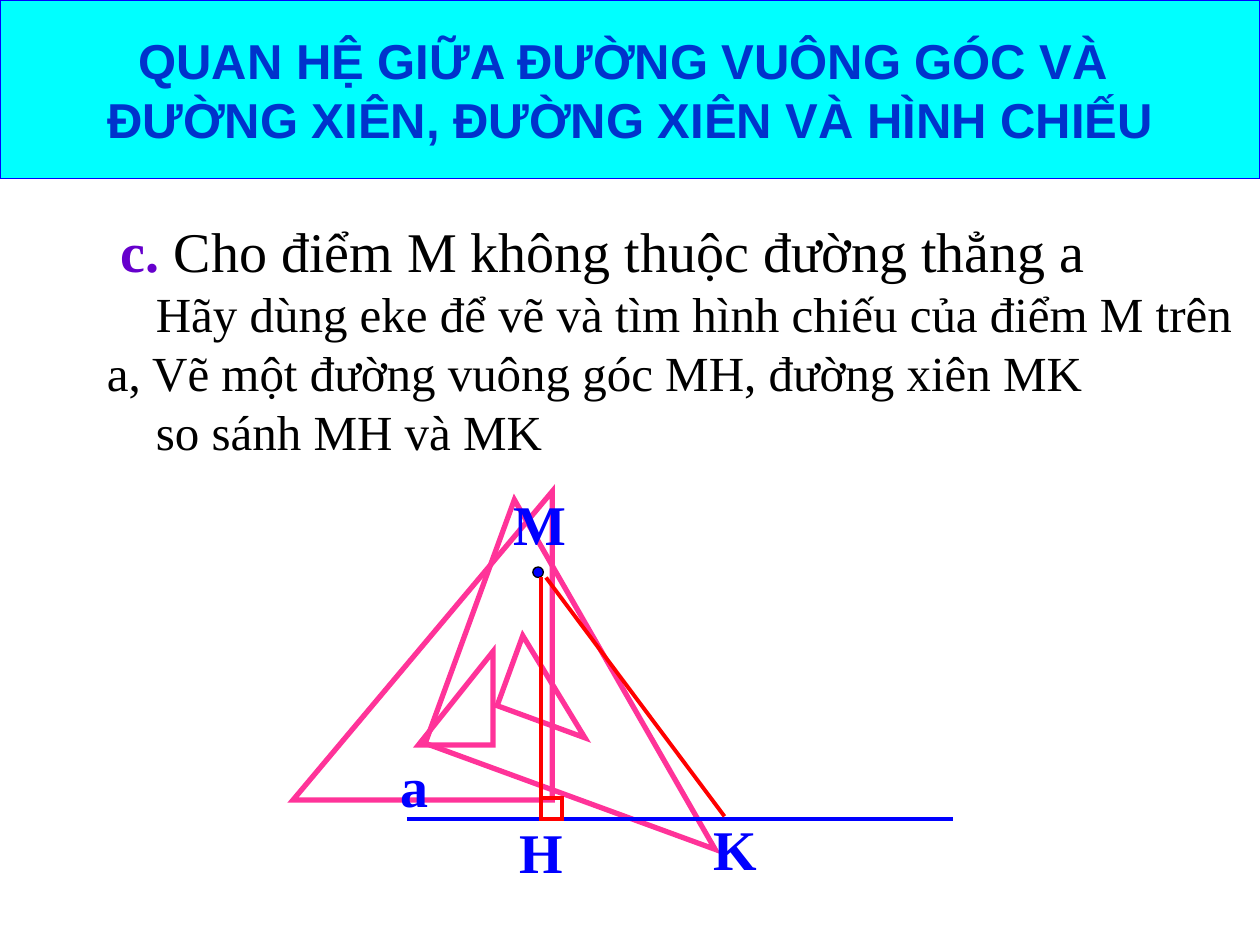
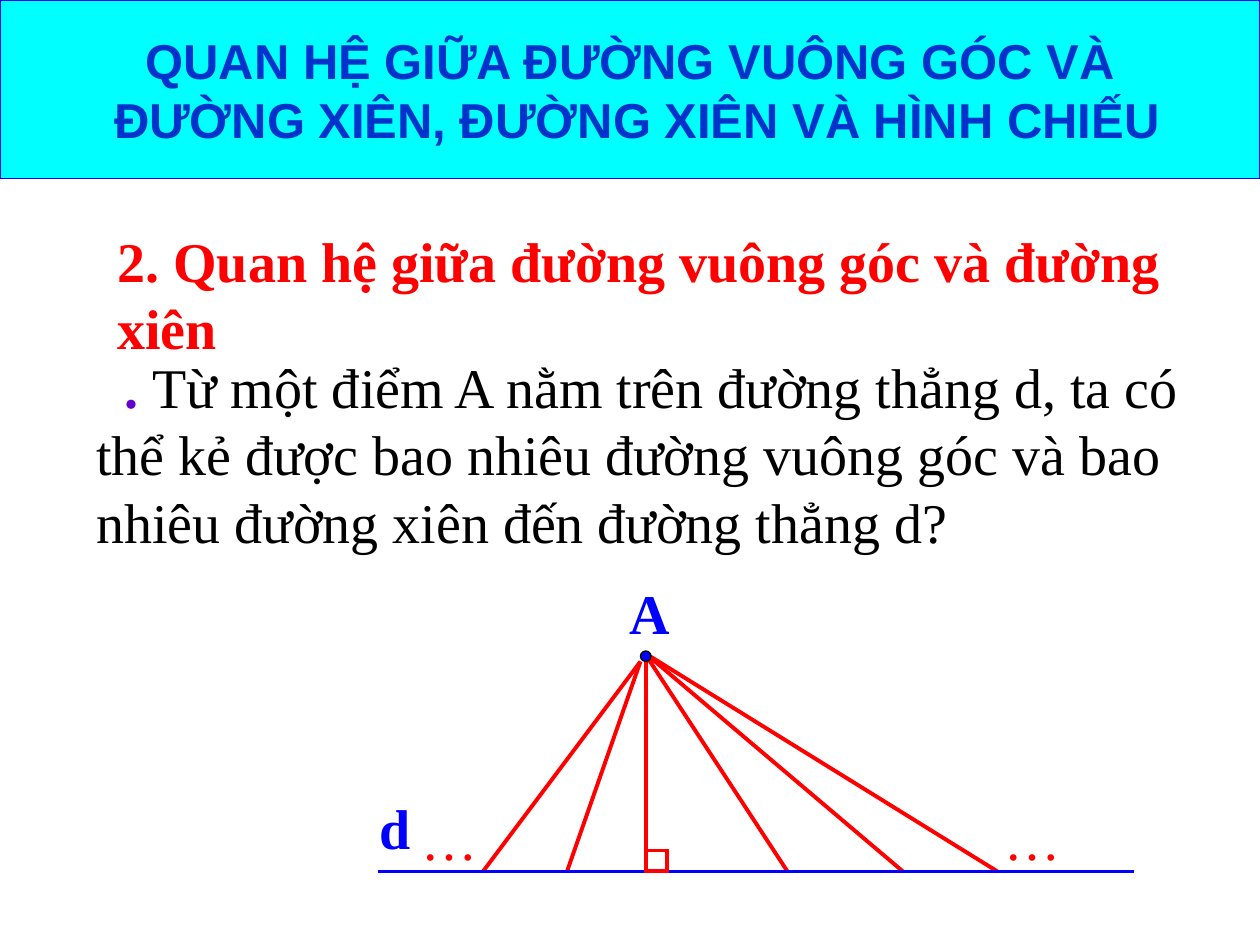
from dataclasses import dataclass
from typing import Any

from lxml import etree
from pptx import Presentation
from pptx.dml.color import RGBColor
from pptx.enum.shapes import MSO_CONNECTOR, MSO_SHAPE
from pptx.enum.text import MSO_ANCHOR, MSO_AUTO_SIZE, PP_ALIGN
from pptx.oxml.ns import qn
from pptx.util import Inches, Pt

STRAIGHT = MSO_CONNECTOR.STRAIGHT
TRIANGLE, RECT, OVAL = MSO_SHAPE.RIGHT_TRIANGLE, MSO_SHAPE.RECTANGLE, MSO_SHAPE.OVAL
MIDDLE, CENTER = MSO_ANCHOR.MIDDLE, PP_ALIGN.CENTER
NO_FIT, GROW = MSO_AUTO_SIZE.NONE, MSO_AUTO_SIZE.SHAPE_TO_FIT_TEXT
TITLE_ONLY = 5
COLUMNS, ROWS = 120, 90


@dataclass(frozen=True)
class Theme:
    band: str = "00FFFF"
    title: str = "0033CC"
    label: str = "0000FF"
    ink: str = "000000"
    accent: str = "FF0000"
    marker: str = "6600CC"
    set_square: str = "FF3399"
    title_font: str = "Arial"
    body_font: str = "Times New Roman"
    large: int = 32
    medium: int = 28
    thin: float = 0.75
    medium_line: float = 2.25
    thick: float = 3


@dataclass
class Board:
    """Draws on the current slide; all positions are grid columns and rows."""
    prs: Any
    theme: Theme
    slide: Any = None

    def grid(self, x, y):
        return (round(self.prs.slide_width * x / COLUMNS),
                round(self.prs.slide_height * y / ROWS))

    def new_slide(self, *title_lines):
        t = self.theme
        self.slide = self.prs.slides.add_slide(self.prs.slide_layouts[TITLE_ONLY])
        sp = self.slide.shapes.title
        sp.left, sp.top = self.grid(0, 0)
        sp.width, sp.height = self.grid(COLUMNS, 17)
        sp.fill.solid()
        sp.fill.fore_color.rgb = RGBColor.from_string(t.band)
        self.outline(sp, t.label, t.thin)
        tf = sp.text_frame
        tf.word_wrap, tf.auto_size, tf.vertical_anchor = False, NO_FIT, MIDDLE
        for i, line in enumerate(title_lines):
            p = tf.add_paragraph() if i else tf.paragraphs[0]
            p.alignment = CENTER
            self.run(p, line, t.medium, t.title, True, t.title_font)

    def outline(self, sp, color, width):
        """Set a solid line with sharp corners."""
        sp.line.color.rgb = RGBColor.from_string(color)
        sp.line.width = Pt(width)
        ln = sp._element.spPr.find(qn("a:ln"))
        etree.SubElement(ln, qn("a:miter")).set("lim", "800000")

    def run(self, p, text, size, color, bold=False, font=None):
        r = p.add_run()
        r.text = text
        r.font.name = font or self.theme.body_font
        r.font.size, r.font.bold = Pt(size), bold
        r.font.color.rgb = RGBColor.from_string(color)

    def text(self, x, y, w, h, *paragraphs):
        """Each paragraph is (first-line indent in points, list of runs)."""
        sp = self.slide.shapes.add_textbox(*self.grid(x, y), *self.grid(w, h))
        tf = sp.text_frame
        tf.word_wrap, tf.auto_size = True, GROW
        for i, (indent, runs) in enumerate(paragraphs):
            p = tf.add_paragraph() if i else tf.paragraphs[0]
            if indent:
                p._p.get_or_add_pPr().set("indent", str(Pt(indent)))
            for r in runs:
                self.run(p, *r)

    def label(self, text, x, y):
        self.text(x, y, 8, 7.5, (0, [(text, self.theme.large, self.theme.label, True)]))

    def dots(self, x, y):
        self.text(x, y, 10, 7.5, (0, [("…", self.theme.large, self.theme.accent)]))

    def shape(self, kind, x, y, w, h, color, width, fill=None):
        sp = self.slide.shapes.add_shape(kind, *self.grid(x, y), *self.grid(w, h))
        sp.shadow.inherit = False
        if fill:
            sp.fill.solid()
            sp.fill.fore_color.rgb = RGBColor.from_string(fill)
        else:
            sp.fill.background()
        self.outline(sp, color, width)
        return sp

    def point(self, x, y):
        t = self.theme
        self.shape(OVAL, x, y, 1, 1, t.ink, t.thin, t.label)

    def right_angle(self, x, foot):
        t = self.theme
        self.shape(RECT, x, foot - 2, 2, 2, t.accent, t.medium_line)

    def set_square(self, outer_center, inner_center, angle):
        """A drawing triangle with its cut-out, both turned about their centres."""
        t = self.theme
        for (cx, cy), w, h in ((outer_center, 29.4, 24.7), (inner_center, 8.9, 7.1)):
            sp = self.shape(TRIANGLE, cx - w / 2, cy - h / 2, w, h, t.set_square, t.thick)
            sp.rotation = angle

    def line(self, start, end, color=None):
        c = self.slide.shapes.add_connector(STRAIGHT, *self.grid(*start), *self.grid(*end))
        self.outline(c, color or self.theme.accent, self.theme.medium_line)
        etree.SubElement(c._element.spPr, qn("a:effectLst"))


def draw_point_off_line(board):
    t = board.theme
    board.new_slide("QUAN HỆ GIỮA ĐƯỜNG VUÔNG GÓC VÀ ",
                    "ĐƯỜNG XIÊN, ĐƯỜNG XIÊN VÀ HÌNH CHIẾU")
    board.set_square((58.55, 64.25), (52.75, 65.4), 20.1)
    board.set_square((40.25, 61.5), (43.4, 66.5), 270)
    board.text(
        9, 20, 111, 24.6,
        (8, [("c. ", t.large, t.marker, True),
             ("Cho điểm M không thuộc đường thẳng a", t.large, t.ink)]),
        (28, [("Hãy dùng eke để vẽ và tìm hình chiếu của điểm M trên a, "
               "Vẽ một đường vuông góc MH, đường xiên MK", t.medium, t.ink)]),
        (28, [("so sánh MH và MK", t.medium, t.ink)]))
    foot = 78
    board.line((38.75, foot), (90.75, foot), t.label)
    board.point(50.75, 54)
    board.line((51.5, 55), (51.5, 77.75))
    board.right_angle(51.5, foot)
    board.line((52, 55), (69, 77.75))
    for name, x, y in (("a", 37, 71), ("M", 47.75, 46), ("H", 48.25, 77.25), ("K", 66.75, 77)):
        board.label(name, x, y)


def draw_perpendicular_and_obliques(board):
    t = board.theme
    board.new_slide("QUAN HỆ GIỮA ĐƯỜNG VUÔNG GÓC VÀ",
                    " ĐƯỜNG XIÊN, ĐƯỜNG XIÊN VÀ HÌNH CHIẾU")
    foot = 83
    for start, foot_x in (((61.5, 62.5), 61.5), ((61.75, 62.75), 75), ((61.5, 62.25), 86),
                          ((61.5, 62.25), 95), ((61, 63), 46), ((61, 63), 54)):
        board.line(start, (foot_x, foot))
    board.text(10, 21, 110, 14.2,
               (0, [("2. Quan hệ giữa đường vuông góc và đường xiên",
                     t.large, t.accent, True)]))
    board.text(8, 33, 112, 20.6,
               (16, [(". ", t.large, t.marker, True),
                     ("Từ một điểm A nằm trên đường thẳng d, ta có thể kẻ được bao nhiêu "
                      "đường vuông góc và bao nhiêu đường xiên đến đường thẳng d?",
                      t.large, t.ink)]))
    board.point(61, 62)
    board.line((36, foot), (108, foot), t.label)
    board.right_angle(61.5, foot)
    board.label("A", 58.75, 54.5)
    board.label("d", 35, 75)
    for x in (39, 94.5):
        board.dots(x, 76)


def main():
    prs = Presentation()
    prs.slide_width, prs.slide_height = Inches(10), Inches(7.5)
    board = Board(prs, Theme())
    draw_point_off_line(board)
    draw_perpendicular_and_obliques(board)
    prs.save("out.pptx")


if __name__ == "__main__":
    main()
